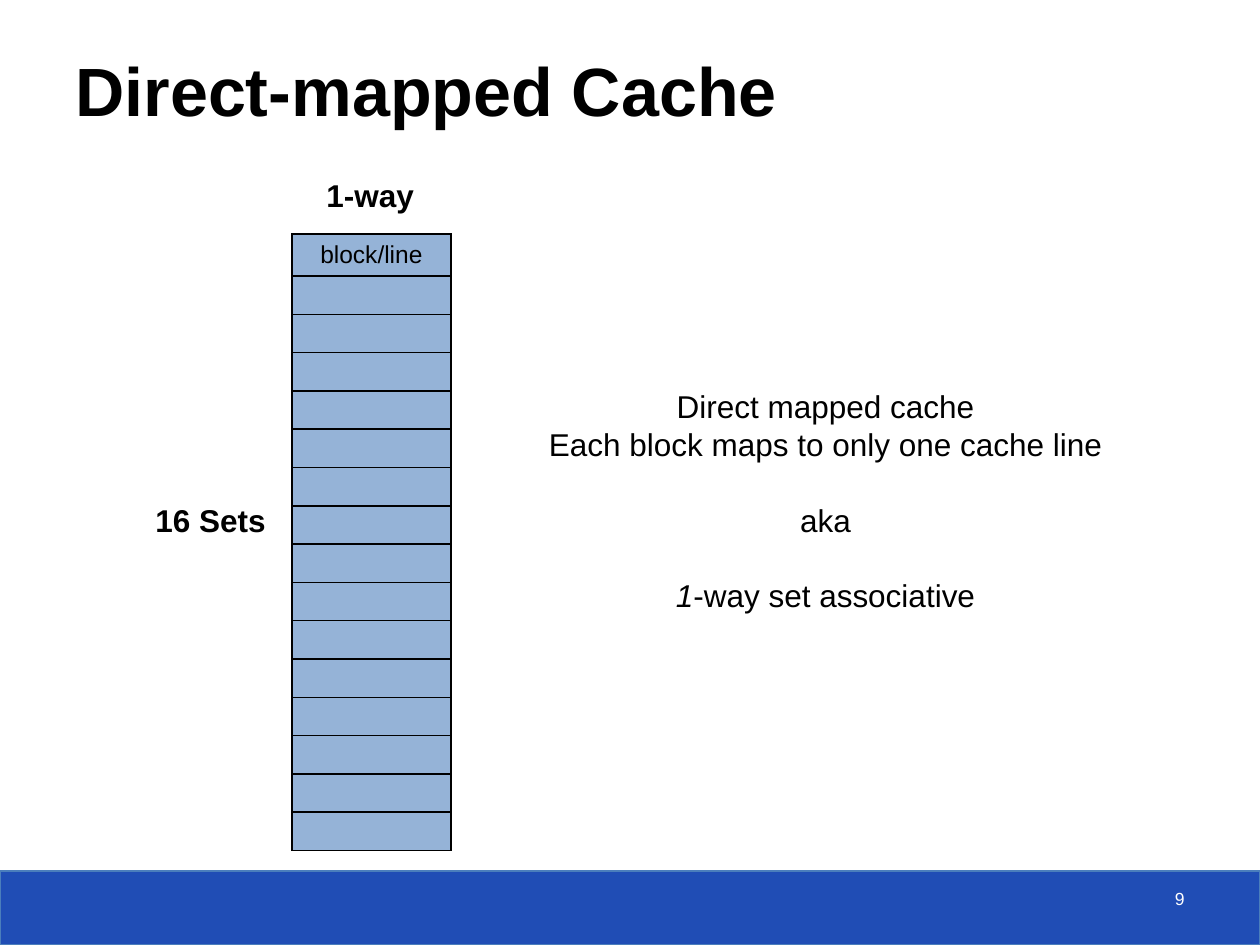
import pptx
import pptx.util
import pptx.dml.color
import pptx.enum.shapes
import pptx.enum.text
import pptx.oxml
import pptx.oxml.ns

EMU_PER_PX = 914400 / 126
SET_COUNT = 16
ALIGN = pptx.enum.text.PP_ALIGN
ANCHOR = pptx.enum.text.MSO_ANCHOR


def px(length):
    return pptx.util.Emu(round(length * EMU_PER_PX))


def colour(code):
    return pptx.dml.color.RGBColor.from_string(code)


def add_xml(parent, tag, **attributes):
    element = pptx.oxml.ns.qn(tag)
    child = parent.makeelement(element, attributes)
    parent.append(child)
    return child


def format_paragraph(paragraph, size, align, bold=False, ink="000000"):
    paragraph.alignment = align
    for run in paragraph.runs:
        run.font.name = "Arial"
        run.font.size = pptx.util.Pt(size)
        run.font.bold = bold
        run.font.color.rgb = colour(ink)


def add_text(slide, box, text, size, align, bold=False, ink="000000",
             anchor=ANCHOR.TOP, wrap=False):
    label = slide.shapes.add_textbox(*map(px, box))
    frame = label.text_frame
    frame.word_wrap = wrap
    frame.vertical_anchor = anchor
    frame.text = text
    for paragraph in frame.paragraphs:
        format_paragraph(paragraph, size, align, bold, ink)
    return label


def add_footer_band(slide):
    band = slide.shapes.add_shape(
        pptx.enum.shapes.MSO_SHAPE.RECTANGLE, *map(px, (0, 871, 1260, 74)))
    band.shadow.inherit = False
    band.fill.solid()
    band.fill.fore_color.rgb = colour("204DB5")
    band.line.color.rgb = colour("4B7EBC")
    band.line.width = pptx.util.Pt(0.75)


def add_title(slide, text):
    title = add_text(slide, (63, 31, 1162, 105), text, 39, ALIGN.LEFT,
                     bold=True, anchor=ANCHOR.BOTTOM, wrap=True)
    title.fill.solid()
    title.fill.fore_color.rgb = colour("FFFFFF")
    tint = title.fill._xPr.find(".//" + pptx.oxml.ns.qn("a:srgbClr"))
    add_xml(tint, "a:alpha", val="75000")


def style_cell(cell):
    properties = cell._tc.get_or_add_tcPr()
    for side in ("a:lnL", "a:lnR", "a:lnT", "a:lnB"):
        border = add_xml(properties, side, w="12700")
        ink = add_xml(border, "a:solidFill")
        add_xml(ink, "a:srgbClr", val="000000")
    cell.fill.solid()
    cell.fill.fore_color.rgb = colour("95B3D7")
    cell.vertical_anchor = ANCHOR.MIDDLE


def add_cache_table(slide, left, top, width, height, first_row):
    cache = slide.shapes.add_table(
        SET_COUNT, 1, *map(px, (left, top, width, height))).table
    cache.first_row = False
    cache.horz_banding = False
    for index, row in enumerate(cache.rows):
        row.height = px((height - first_row) / (SET_COUNT - 1) if index else first_row)
        cell = row.cells[0]
        style_cell(cell)
        paragraph = cell.text_frame.paragraphs[0]
        if index == 0:
            paragraph.text = "block/line"
            format_paragraph(paragraph, 14, ALIGN.CENTER)
        else:
            add_xml(paragraph._p, "a:endParaRPr", sz="1200")


def add_explanation(slide):
    lines = ["Direct mapped cache", "Each block maps to only one cache line",
             "aka", "1-way set associative"]
    explanation = add_text(slide, (534, 381, 583, 280), "\n".join(lines),
                           18, ALIGN.CENTER)
    paragraphs = explanation.text_frame.paragraphs
    for paragraph in paragraphs:
        paragraph.line_spacing = pptx.util.Pt(21.6)
    for paragraph in paragraphs[2:]:
        paragraph.space_before = pptx.util.Pt(21.6)
    associativity = paragraphs[3]
    associativity.text = "1"
    associativity.add_run().text = "-way set associative"
    format_paragraph(associativity, 18, ALIGN.CENTER)
    associativity.runs[0].font.italic = True


def main():
    presentation = pptx.Presentation()
    presentation.slide_width = px(1260)
    presentation.slide_height = px(945)
    slide = presentation.slides.add_slide(presentation.slide_layouts[6])
    add_footer_band(slide)
    add_title(slide, "Direct-mapped Cache")
    add_text(slide, (903, 882, 294, 42), "9", 10, ALIGN.RIGHT, ink="FFFFFF", wrap=True)
    add_cache_table(slide, 292, 234, 159, 616, 41)
    add_text(slide, (142, 495, 137, 50), "16 Sets", 18, ALIGN.CENTER, bold=True)
    add_text(slide, (314, 170, 113, 50), "1-way", 18, ALIGN.LEFT, bold=True)
    add_explanation(slide)
    presentation.save("out.pptx")


if __name__ == "__main__":
    main()
